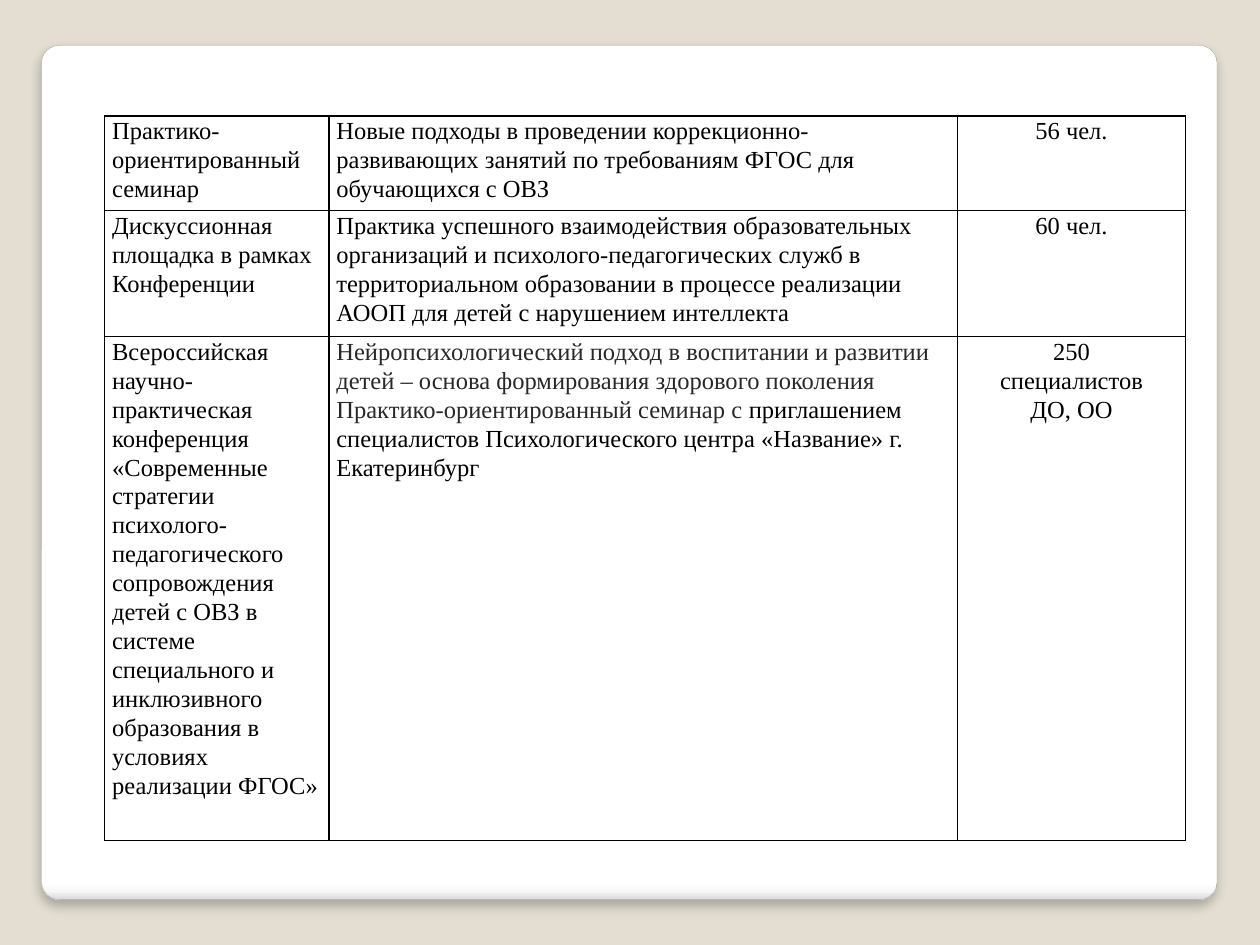
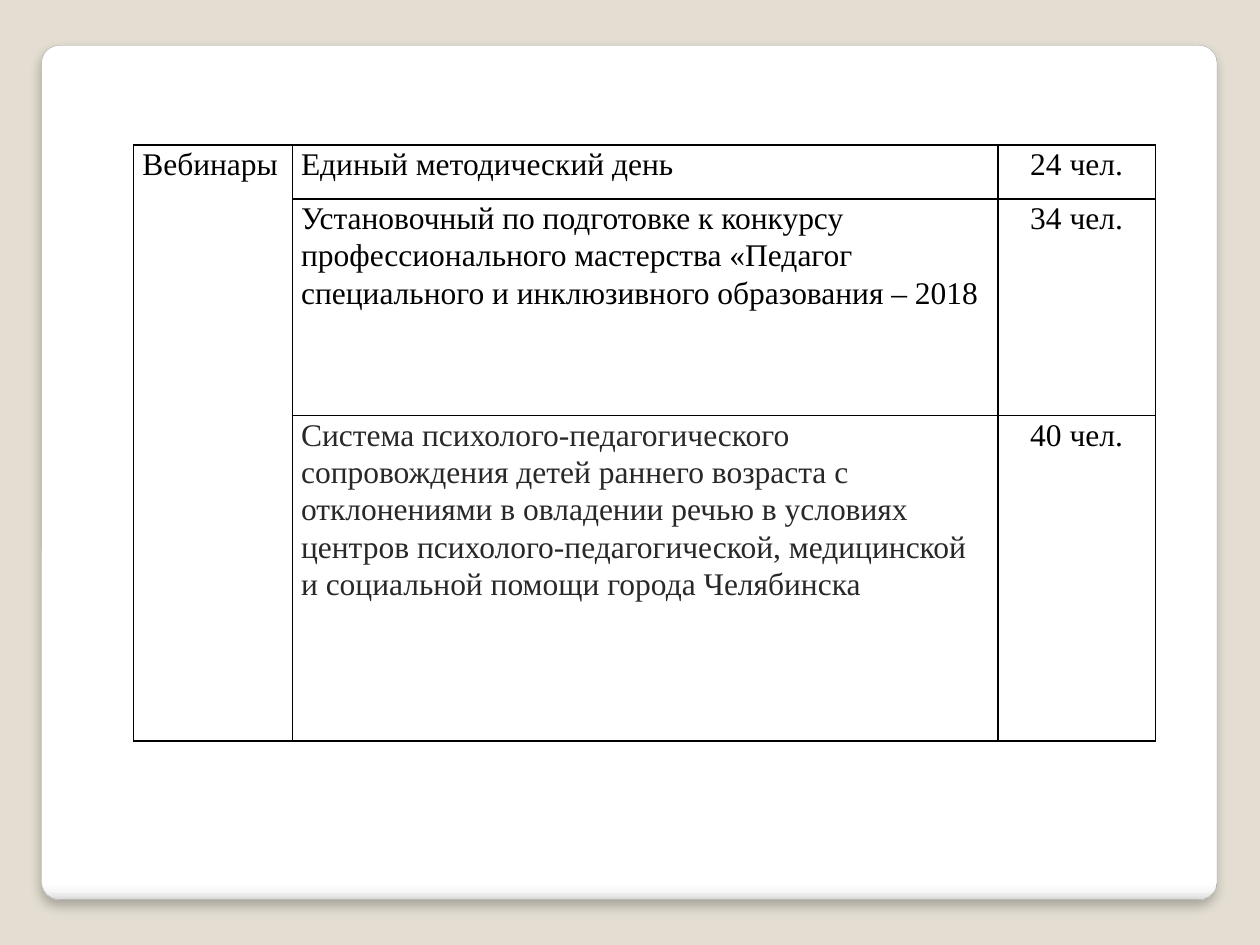
from lxml.etree import SubElement
from pptx import Presentation
from pptx.dml.color import RGBColor
from pptx.enum.shapes import MSO_SHAPE
from pptx.enum.text import PP_ALIGN
from pptx.oxml.ns import qn
from pptx.util import Inches, Pt

HUES = {"sand": "E3DED1", "white": "FFFFFF", "mist": "F7F7F7", "ash": "DADADA",
        "edge": "A4A4A4", "black": "000000", "gray": "282828"}
STOPS = [(0, "white"), (98, "white"), (99, "mist"), (100, "ash")]
FONT = "Times New Roman"
CARD = (0.33, 0.36, 9.33, 6.78)

# A cell is a list of paragraphs; a paragraph is a list of (text, colour) runs.


def plain(*lines, hue="black"):
    return [[(line, hue)] for line in lines]


EVENTS = [
    [plain("Практико-ориентированный семинар"),
     plain("Новые подходы в проведении коррекционно-развивающих занятий "
           "по требованиям ФГОС для обучающихся с ОВЗ"),
     plain("56 чел.")],
    [plain("Дискуссионная площадка в рамках Конференции"),
     plain("Практика успешного взаимодействия образовательных организаций "
           "и психолого-педагогических служб в территориальном образовании "
           "в процессе реализации АООП для детей с нарушением интеллекта"),
     plain("60 чел.")],
    [plain("Всероссийская научно-практическая конференция «Современные "
           "стратегии психолого-педагогического сопровождения детей с ОВЗ "
           "в системе специального и инклюзивного образования в условиях "
           "реализации ФГОС»"),
     [[("Нейропсихологический подход в воспитании и развитии детей – "
        "основа формирования здорового поколения", "gray")],
      [("Практико-ориентированный семинар с ", "gray"),
       ("приглашением специалистов Психологического центра «Название» "
        "г. Екатеринбург", "black")]],
     plain("250", "специалистов", "ДО, ОО")],
]

WEBINARS = [
    [plain("Вебинары"), plain("Единый методический день"), plain("24 чел.")],
    [None,
     plain("Установочный по подготовке к конкурсу профессионального "
           "мастерства «Педагог специального и инклюзивного "
           "образования – 2018"),
     plain("34 чел.")],
    [None,
     plain("Система психолого-педагогического сопровождения детей раннего "
           "возраста с отклонениями в овладении речью в условиях центров "
           "психолого-педагогической, медицинской и социальной помощи "
           "города Челябинска", hue="gray"),
     plain("40 чел.")],
]


def color(name):
    return RGBColor.from_string(HUES[name])


def paint(node, name, alpha=None):
    """Add an RGB colour to an XML node, with an optional opacity in percent."""
    rgb = SubElement(node, qn("a:srgbClr"), val=HUES[name])
    if alpha is not None:
        SubElement(rgb, qn("a:alpha"), val=str(alpha * 1000))


def add_card(master, slide, box):
    """Build the card on a slide, then move it to the back of the master."""
    card = slide.shapes.add_shape(MSO_SHAPE.ROUNDED_RECTANGLE, *map(Inches, box))
    card.adjustments[0] = 0.021
    card.fill.gradient()
    card.fill.gradient_angle = 270
    card.line.color.rgb = color("edge")
    card.line.width = Pt(0.16)
    card.shadow.inherit = False
    props = card.element.spPr
    stops = props.find(".//" + qn("a:gsLst"))
    stops.clear()
    for pos, name in STOPS:
        paint(SubElement(stops, qn("a:gs"), pos=str(pos * 1000)), name)
    shade = SubElement(props.find(qn("a:effectLst")), qn("a:outerShdw"),
                       blurRad=str(Pt(6)), dist=str(Pt(4)), dir="5400000",
                       algn="t", rotWithShape="0")
    paint(shade, "black", 25)
    master.shapes.element.insert(2, card.element)


def frame(cell):
    """Clear the cell's fill and draw its four borders."""
    cell.fill.background()
    props = cell._tc.get_or_add_tcPr()
    for spot, side in enumerate("LRTB"):
        line = props.makeelement(qn(f"a:ln{side}"), w=str(Pt(1)))
        paint(SubElement(line, qn("a:solidFill")), "black")
        props.insert(spot, line)


def write(cell, paras, size, align):
    for num, runs in enumerate(paras):
        text = cell.text_frame
        para = text.add_paragraph() if num else text.paragraphs[0]
        para.alignment = align
        para.line_spacing = 1.07
        for words, hue in runs:
            run = para.add_run()
            run.text = words
            for key, val in {"name": FONT, "size": Pt(size)}.items():
                setattr(run.font, key, val)
            run.font.color.rgb = color(hue)


def add_grid(slide, spot, cols, rows, data, size, pad):
    """Draw a table at spot; a None cell joins the one above it."""
    box = (*spot, sum(cols), sum(rows))
    table = slide.shapes.add_table(len(rows), len(cols), *map(Inches, box)).table
    for flag in ("first_row", "horz_banding"):
        setattr(table, flag, False)
    for col, width in zip(table.columns, cols):
        col.width = Inches(width)
    form = {"margin_left": Inches(pad), "margin_right": Inches(pad),
            "margin_top": 0, "margin_bottom": 0}
    for r, line in enumerate(data):
        table.rows[r].height = Inches(rows[r])
        for c, paras in enumerate(line):
            cell = table.cell(r, c)
            frame(cell)
            for key, val in form.items():
                setattr(cell, key, val)
            last = c == len(cols) - 1
            write(cell, paras or [], size,
                  PP_ALIGN.CENTER if last else PP_ALIGN.LEFT)
    for c in range(len(cols)):
        gaps = sum(line[c] is None for line in data)
        if gaps:
            table.cell(0, c).merge(table.cell(gaps, c))


def main():
    deck = Presentation()
    deck.slide_width, deck.slide_height = Inches(10), Inches(7.5)
    master = deck.slide_master
    master.background.fill.solid()
    master.background.fill.fore_color.rgb = color("sand")
    first, second = [deck.slides.add_slide(deck.slide_layouts[6])
                     for _ in range(2)]
    add_card(master, first, CARD)
    add_grid(first, (0.83, 0.92), (1.78, 4.99, 1.81), (0.75, 1, 4),
             EVENTS, 14, 0.06)
    add_grid(second, (1.06, 1.15), (1.26, 5.6, 1.25), (0.43, 1.72, 2.58),
             WEBINARS, 18, 0.07)
    deck.save("out.pptx")


if __name__ == "__main__":
    main()
